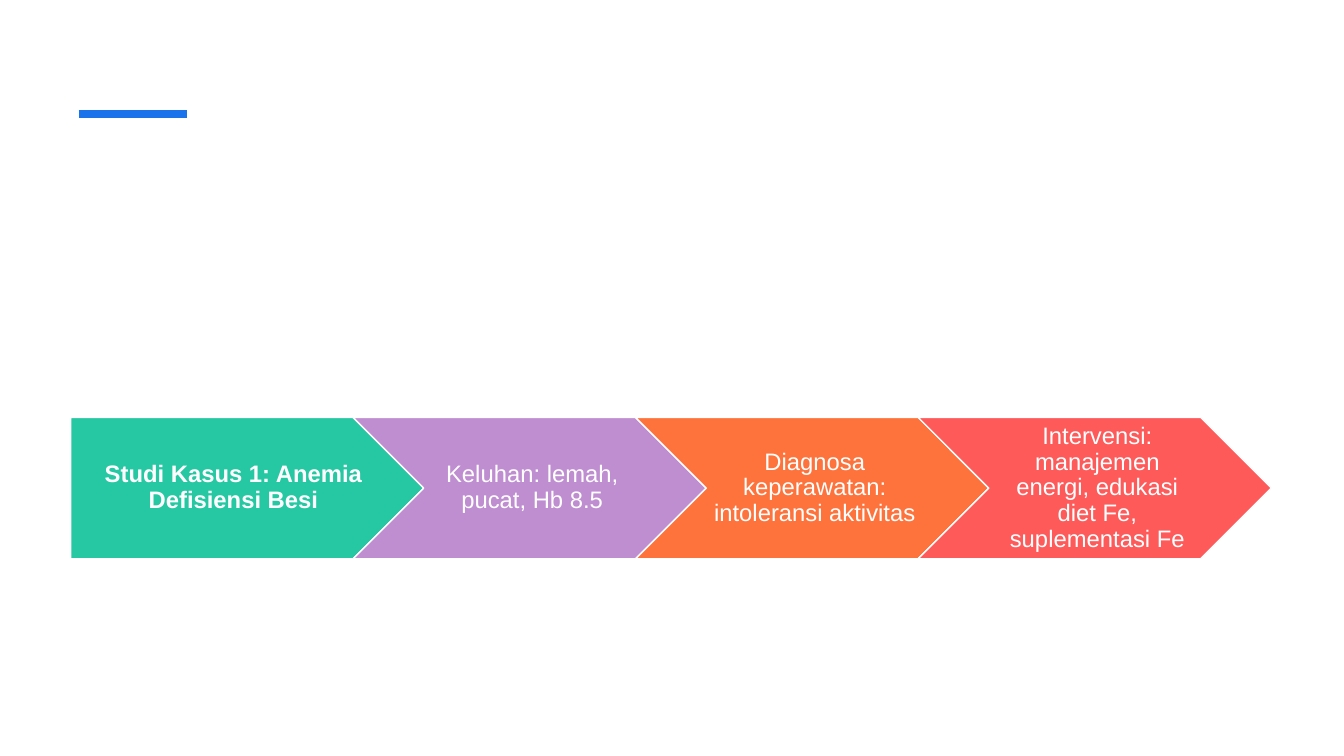
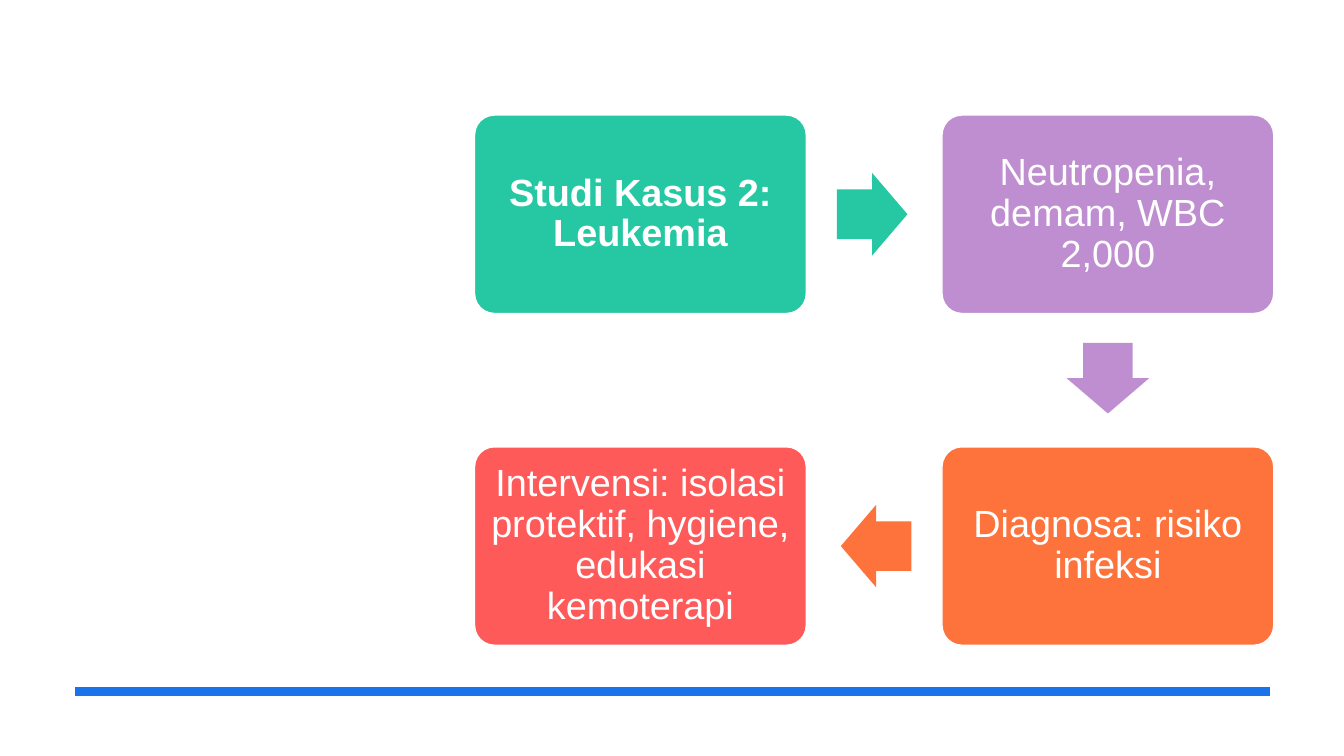
"""Build two nursing case-study slides: a chevron process and a bending process."""
from itertools import pairwise

from lxml.etree import SubElement
from pptx import Presentation
from pptx.dml.color import RGBColor
from pptx.enum.shapes import MSO_CONNECTOR, MSO_SHAPE
from pptx.enum.text import MSO_ANCHOR, PP_ALIGN
from pptx.oxml.ns import qn
from pptx.util import Cm, Pt

ANEMIA_STEPS = [
    "Studi Kasus 1: Anemia Defisiensi Besi",
    "Keluhan: lemah, pucat, Hb 8.5",
    "Diagnosa keperawatan: intoleransi aktivitas",
    "Intervensi: manajemen energi, edukasi diet Fe, suplementasi Fe",
]
LEUKEMIA_STEPS = [
    "Studi Kasus 2: Leukemia",
    "Neutropenia, demam, WBC 2,000",
    "Diagnosa: risiko infeksi",
    "Intervensi: isolasi protektif, hygiene, edukasi kemoterapi",
]

WHITE = RGBColor(0xFF, 0xFF, 0xFF)
BLUE = RGBColor(0x19, 0x73, 0xEB)
STEP_COLORS = [
    RGBColor(0x25, 0xC8, 0xA2),
    RGBColor(0xBF, 0x8E, 0xD1),
    RGBColor(0xFE, 0x73, 0x3C),
    RGBColor(0xFE, 0x5A, 0x5A),
]
FONT = "Arial"

CHEVRON_LEFT, CHEVRON_TOP = 1.78, 10.52
CHEVRON_WIDTH, CHEVRON_HEIGHT = 8.9, 3.56
CHEVRON_PITCH = 0.8 * CHEVRON_WIDTH

CARD_LEFT, CARD_TOP = 11.96, 2.9
CARD_WIDTH, CARD_HEIGHT = 8.36, 5.0
CARD_PITCH_X, CARD_PITCH_Y = 11.78, 8.36
CARD_CELLS = [(0, 0), (1, 0), (1, 1), (0, 1)]
ARROW_WIDTH, ARROW_HEIGHT = 1.78, 2.08
ARROW_SETBACK = 0.05
ARROW_TURNS = {(1, 0): 0, (0, 1): 90, (-1, 0): 180}


def add_rule(page, left, right, height):
    rule = page.shapes.add_connector(
        MSO_CONNECTOR.STRAIGHT, Cm(left), Cm(height), Cm(right), Cm(height))
    rule.line.color.rgb = BLUE
    rule.line.width = Pt(6)
    SubElement(rule.element.spPr, qn("a:effectLst"))


def add_block(page, kind, place, color, adjustments=(), outlined=True):
    block = page.shapes.add_shape(kind, *map(Cm, place))
    block.shadow.inherit = False
    block.fill.solid()
    block.fill.fore_color.rgb = color
    if outlined:
        block.line.color.rgb = WHITE
        block.line.width = Pt(1)
    else:
        block.line.fill.background()
    for index, value in enumerate(adjustments):
        block.adjustments[index] = value
    return block


def write_text(block, text, size, margins, bold=False):
    frame = block.text_frame
    frame.word_wrap = True
    frame.vertical_anchor = MSO_ANCHOR.MIDDLE
    (frame.margin_left, frame.margin_top,
     frame.margin_right, frame.margin_bottom) = map(Cm, margins)
    para = frame.paragraphs[0]
    para.alignment = PP_ALIGN.CENTER
    para.line_spacing = 0.9
    span = para.add_run()
    span.text = text
    span.font.name = FONT
    span.font.size = Pt(size)
    span.font.bold = bold
    span.font.color.rgb = WHITE


def build_anemia(page):
    add_rule(page, 1.98, 4.7, 2.87)
    for index, (text, color) in enumerate(zip(ANEMIA_STEPS, STEP_COLORS)):
        first = index == 0
        place = (CHEVRON_LEFT + index * CHEVRON_PITCH, CHEVRON_TOP,
                 CHEVRON_WIDTH, CHEVRON_HEIGHT)
        kind = MSO_SHAPE.PENTAGON if first else MSO_SHAPE.CHEVRON
        block = add_block(page, kind, place, color)
        margins = (0.25 if first else 0.18, 0.13, 0.05, 0.13)
        write_text(block, text, 17, margins, bold=first)


def add_arrow(page, start, end, color):
    step = (end[0] - start[0], end[1] - start[1])
    center_x = (CARD_LEFT + CARD_WIDTH / 2 - ARROW_SETBACK * step[0]
                + CARD_PITCH_X * (start[0] + end[0]) / 2)
    center_y = (CARD_TOP + CARD_HEIGHT / 2 - ARROW_SETBACK * step[1]
                + CARD_PITCH_Y * (start[1] + end[1]) / 2)
    place = (center_x - ARROW_WIDTH / 2, center_y - ARROW_HEIGHT / 2,
             ARROW_WIDTH, ARROW_HEIGHT)
    arrow = add_block(page, MSO_SHAPE.RIGHT_ARROW, place, color,
                      adjustments=(0.6, 0.5), outlined=False)
    arrow.rotation = ARROW_TURNS[step]


def build_leukemia(page):
    add_rule(page, 1.88, 32.0, 17.42)
    for index, (text, color) in enumerate(zip(LEUKEMIA_STEPS, STEP_COLORS)):
        column, row = CARD_CELLS[index]
        place = (CARD_LEFT + column * CARD_PITCH_X, CARD_TOP + row * CARD_PITCH_Y,
                 CARD_WIDTH, CARD_HEIGHT)
        card = add_block(page, MSO_SHAPE.ROUNDED_RECTANGLE, place, color,
                         adjustments=(0.1,))
        write_text(card, text, 27, (0.27,) * 4, bold=index == 0)
    for (start, end), color in zip(pairwise(CARD_CELLS), STEP_COLORS):
        add_arrow(page, start, end, color)


def main():
    deck = Presentation()
    deck.slide_width, deck.slide_height = Cm(33.87), Cm(19.05)
    blank = deck.slide_layouts[6]
    for build in (build_anemia, build_leukemia):
        build(deck.slides.add_slide(blank))
    deck.save("out.pptx")


if __name__ == "__main__":
    main()
